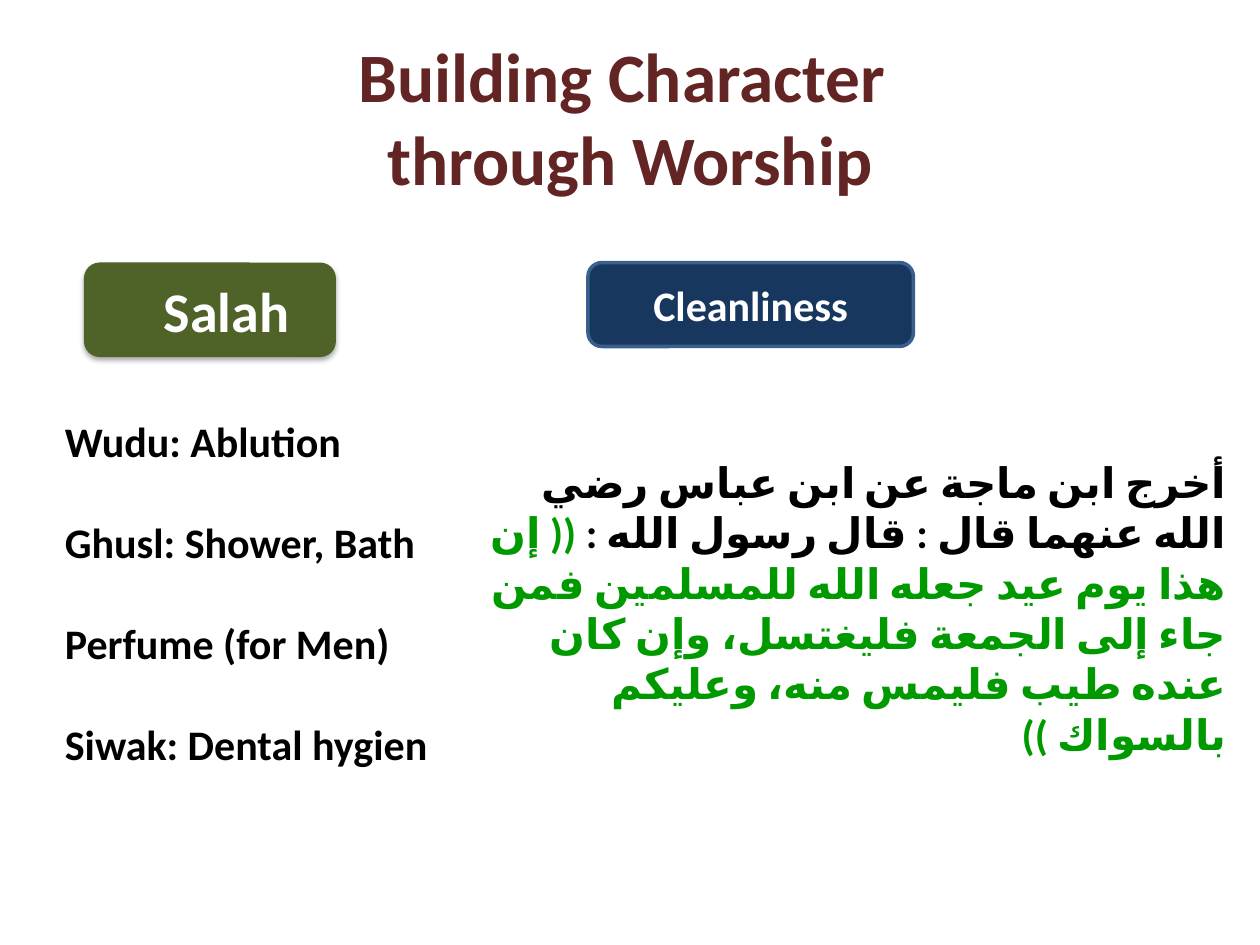
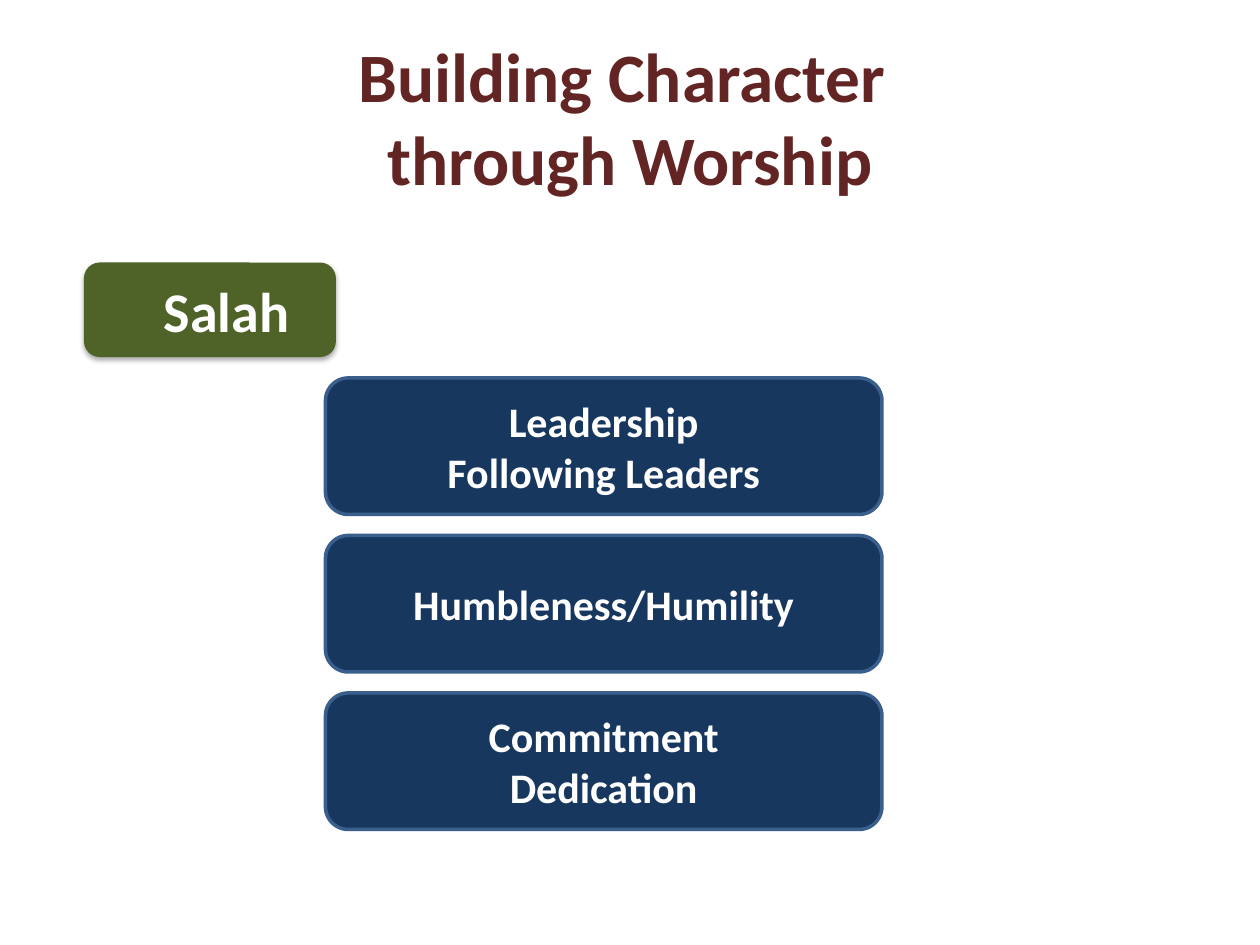
from lxml.etree import SubElement
from pptx import Presentation
from pptx.dml.color import RGBColor
from pptx.enum.shapes import MSO_SHAPE
from pptx.enum.text import MSO_ANCHOR, MSO_AUTO_SIZE, PP_ALIGN
from pptx.oxml.ns import qn
from pptx.util import Pt

PX = 7620  # EMU; 120 px to the inch
FONT = "Calibri"
MAROON = RGBColor(0x63, 0x25, 0x23)
OLIVE = RGBColor(0x4F, 0x62, 0x28)
NAVY = RGBColor(0x17, 0x37, 0x5E)
NAVY_EDGE = RGBColor(0x3A, 0x5F, 0x8C)
GREEN = RGBColor(0x00, 0x99, 0x00)
BLACK = RGBColor(0, 0, 0)
WHITE = RGBColor(0xFF, 0xFF, 0xFF)

TITLE = "Building Character \vthrough Worship"
PURITY_PRACTICES = [
    "Wudu: Ablution",
    "Ghusl: Shower, Bath",
    "Perfume (for Men)",
    "Siwak: Dental hygien",
]
HADITH_SOURCE = "أخرج ابن ماجة عن ابن عباس رضي الله عنهما قال : قال رسول الله : "
HADITH_WORDS = (
    "(( إن هذا يوم عيد جعله الله للمسلمين فمن جاء إلى الجمعة فليغتسل، "
    "وإن كان عنده طيب فليمس منه، وعليكم بالسواك ))"
)
VIRTUES = [
    ["Leadership", "Following Leaders"],
    ["Humbleness/Humility"],
    ["Commitment", "Dedication"],
]


def emu(*lengths):
    return [length * PX for length in lengths]


def set_arabic(span):
    """Mark a span as Arabic and name its complex-script font."""
    properties = span._r.get_or_add_rPr()
    properties.set("lang", "ar-SA")
    SubElement(properties, qn("a:cs"), typeface=FONT)


def write(shape, lines, size=24, color=BLACK, align=PP_ALIGN.LEFT,
          anchor=MSO_ANCHOR.MIDDLE, wrap=True, gap=0, indent=0, rtl=False):
    """Fill a shape; each line is a string or a list of (text, color) spans."""
    frame = shape.text_frame
    frame.word_wrap = wrap
    frame.vertical_anchor = anchor
    for index, line in enumerate(lines):
        para = frame.add_paragraph() if index else frame.paragraphs[0]
        para.alignment = align
        if index and gap:
            para.space_before = Pt(gap)
        properties = para._p.get_or_add_pPr()
        if indent:
            para.level = 1
            properties.set("marL", str(indent * PX))
            properties.set("indent", "0")
        if rtl:
            properties.set("rtl", "1")
        para.font.size = Pt(size)
        spans = [(line, color)] if isinstance(line, str) else line
        for text, span_color in spans:
            for part, piece in enumerate(text.split("\v")):
                if part:
                    para.add_line_break()
                span = para.add_run()
                span.text = piece
                span.font.name = FONT
                span.font.size = Pt(size)
                span.font.bold = True
                span.font.color.rgb = span_color
                if rtl:
                    set_arabic(span)


def add_text(page, left, top, width, height, lines, grow=False, **style):
    box = page.shapes.add_textbox(*emu(left, top, width, height))
    write(box, lines, **style)
    if grow:
        box.text_frame.auto_size = MSO_AUTO_SIZE.SHAPE_TO_FIT_TEXT


def add_card(page, left, top, width, height, lines, fill=NAVY, edge=NAVY_EDGE,
             align=PP_ALIGN.CENTER, **style):
    card = page.shapes.add_shape(MSO_SHAPE.ROUNDED_RECTANGLE,
                                 *emu(left, top, width, height))
    card.shadow.inherit = False
    card.fill.solid()
    card.fill.fore_color.rgb = fill
    if edge is None:
        card.line.fill.background()
    else:
        card.line.color.rgb = edge
        card.line.width = Pt(2)
    write(card, lines, color=WHITE, align=align, **style)
    return card


def add_drop_shadow(shape):
    effects = shape._element.spPr.find(qn("a:effectLst"))
    shadow = SubElement(effects, qn("a:outerShdw"), blurRad=str(Pt(3.1)),
                        dist=str(Pt(1.8)), dir="5400000", rotWithShape="0")
    color = SubElement(shadow, qn("a:srgbClr"), val="000000")
    SubElement(color, qn("a:alpha"), val="35000")


def add_salah_page(deck):
    """Add a page with the shared title and the Salah label."""
    page = deck.slides.add_slide(deck.slide_layouts[6])
    add_text(page, 60, 36, 1080, 150, [TITLE], size=39.6, color=MAROON,
             align=PP_ALIGN.CENTER)
    label = add_card(page, 80, 250, 240, 90, ["Salah"], fill=OLIVE, edge=None,
                     align=PP_ALIGN.LEFT, size=32, indent=60)
    add_drop_shadow(label)
    return page


def build_cleanliness(deck):
    page = add_salah_page(deck)
    add_card(page, 560, 250, 310, 80, ["Cleanliness"])
    hadith = [(HADITH_SOURCE, BLACK), (HADITH_WORDS, GREEN)]
    add_text(page, 430, 500, 750, 157, [hadith], grow=True,
             align=PP_ALIGN.RIGHT, rtl=True)
    add_text(page, 50, 390, 373, 352, PURITY_PRACTICES, grow=True, wrap=False,
             anchor=MSO_ANCHOR.TOP, gap=28.8)


def build_virtues(deck):
    page = add_salah_page(deck)
    for row, virtue in enumerate(VIRTUES):
        add_card(page, 310, 360 + row * 150, 530, 130, virtue)


def main():
    deck = Presentation()
    deck.slide_width, deck.slide_height = emu(1200, 900)
    build_cleanliness(deck)
    build_virtues(deck)
    deck.save("out.pptx")


if __name__ == "__main__":
    main()
